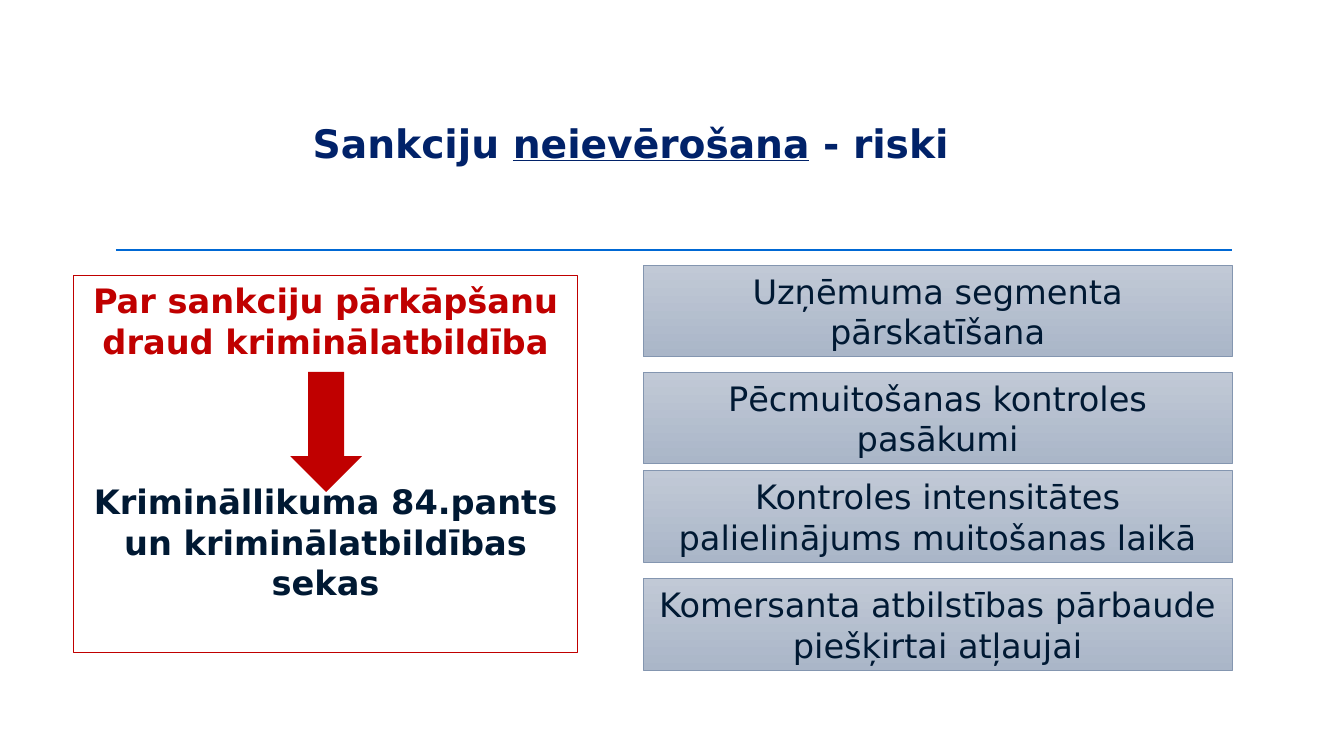
from dataclasses import dataclass
from typing import Any, Optional

from lxml.etree import SubElement
from pptx import Presentation
from pptx.dml.color import RGBColor
from pptx.enum.dml import MSO_LINE
from pptx.enum.shapes import MSO_CONNECTOR, MSO_SHAPE
from pptx.enum.text import MSO_ANCHOR as Anchor, MSO_AUTO_SIZE as AutoSize, PP_ALIGN as Align
from pptx.oxml.ns import qn
from pptx.util import Inches, Pt

NAVY = RGBColor(0x01, 0x22, 0x69)
INK = RGBColor(0x00, 0x19, 0x33)
RED = RGBColor(0xC0, 0x00, 0x00)
BLUE = RGBColor(0x00, 0x68, 0xD4)
CARD_TOP = RGBColor(0xC1, 0xC9, 0xD6)
CARD_BOTTOM = RGBColor(0xAA, 0xB6, 0xC8)
CARD_BORDER = RGBColor(0x84, 0x96, 0xB0)

FONT = "DejaVu Sans"
TITLE_FORMAT = {"name": FONT, "size": Pt(28), "bold": True}
CARD_FORMAT = {"name": FONT, "size": Pt(24), "bold": False}
WARNING_FORMAT = {"name": FONT, "size": Pt(24), "bold": True}
CARD_LEFT, CARD_WIDTH, CARD_HEIGHT = 6.38, 5.84, 0.91


@dataclass(frozen=True)
class Card:
    top: float
    text: str


@dataclass(frozen=True)
class Statement:
    text: str
    color: RGBColor
    space_before: Optional[Pt] = None


CARDS = (
    Card(2.63, "Uzņēmuma segmenta pārskatīšana"),
    Card(3.69, "Pēcmuitošanas kontroles pasākumi"),
    Card(4.67, "Kontroles intensitātes palielinājums muitošanas laikā"),
    Card(5.74, "Komersanta atbilstības pārbaude piešķirtai atļaujai"),
)
STATEMENTS = (
    Statement("Par sankciju pārkāpšanu draud kriminālatbildība", RED),
    Statement("Krimināllikuma 84.pants un kriminālatbildības sekas", INK, Pt(86)),
)


def set_format(target: Any, values: dict[str, Any]) -> None:
    for name, value in values.items():
        setattr(target, name, value)


def set_font(font: Any, values: dict[str, Any], color: RGBColor) -> None:
    set_format(font, values)
    font.color.rgb = color


def add_shape(slide: Any, kind: MSO_SHAPE, left: float, top: float,
              width: float, height: float) -> Any:
    shape = slide.shapes.add_shape(
        kind, Inches(left), Inches(top), Inches(width), Inches(height))
    shape.shadow.inherit = False
    return shape


def set_border(shape: Any, color: RGBColor, width: float) -> None:
    shape.line.color.rgb = color
    shape.line.width = Pt(width)
    shape.line.dash_style = MSO_LINE.SOLID


def add_title(slide: Any) -> None:
    title = slide.shapes.title
    set_format(title, {"left": Inches(0.85), "top": Inches(0.44),
                       "width": Inches(10.81), "height": Inches(1.27)})
    set_format(title.text_frame, {"vertical_anchor": Anchor.BOTTOM,
                                  "word_wrap": True, "auto_size": AutoSize.NONE})
    paragraph = title.text_frame.paragraphs[0]
    set_format(paragraph, {"alignment": Align.CENTER, "line_spacing": 0.9})
    for text, underline in (("Sankciju ", False), ("neievērošana", True), (" - riski", False)):
        run = paragraph.add_run()
        run.text = text
        set_font(run.font, TITLE_FORMAT | {"underline": underline}, NAVY)


def add_divider(slide: Any) -> None:
    divider = slide.shapes.add_connector(
        MSO_CONNECTOR.STRAIGHT, Inches(1.15), Inches(2.48), Inches(12.22), Inches(2.48))
    divider.line.color.rgb = BLUE
    divider.line.width = Pt(1.25)
    SubElement(divider._element.spPr, qn("a:effectLst"))


def write_statements(shape: Any, statements: tuple[Statement, ...],
                     values: dict[str, Any], anchor: Anchor) -> None:
    frame = shape.text_frame
    set_format(frame, {"word_wrap": True, "vertical_anchor": anchor})
    for index, statement in enumerate(statements):
        paragraph = frame.add_paragraph() if index else frame.paragraphs[0]
        paragraph.text = statement.text
        paragraph.alignment = Align.CENTER
        if statement.space_before:
            paragraph.space_before = statement.space_before
        set_font(paragraph.runs[0].font, values, statement.color)


def add_warning(slide: Any) -> None:
    box = add_shape(slide, MSO_SHAPE.RECTANGLE, 0.73, 2.73, 5, 3.74)
    box.fill.background()
    set_border(box, RED, 0.75)
    write_statements(box, STATEMENTS, WARNING_FORMAT, Anchor.TOP)
    arrow = add_shape(slide, MSO_SHAPE.DOWN_ARROW, 2.88, 3.69, 0.71, 1.19)
    arrow.fill.solid()
    arrow.fill.fore_color.rgb = RED
    arrow.line.fill.background()


def add_card(slide: Any, card: Card) -> None:
    shape = add_shape(slide, MSO_SHAPE.RECTANGLE, CARD_LEFT, card.top, CARD_WIDTH, CARD_HEIGHT)
    shape.fill.gradient()
    shape.fill.gradient_angle = 270
    for stop, color in zip(shape.fill.gradient_stops, (CARD_TOP, CARD_BOTTOM)):
        stop.color.rgb = color
    set_border(shape, CARD_BORDER, 0.5)
    write_statements(shape, (Statement(card.text, INK),), CARD_FORMAT, Anchor.MIDDLE)


def main() -> None:
    presentation = Presentation()
    presentation.slide_width = Inches(13.33)
    presentation.slide_height = Inches(7.5)
    slide = presentation.slides.add_slide(presentation.slide_layouts[5])
    add_title(slide)
    add_divider(slide)
    add_warning(slide)
    for card in CARDS:
        add_card(slide, card)
    presentation.save("out.pptx")


if __name__ == "__main__":
    main()
